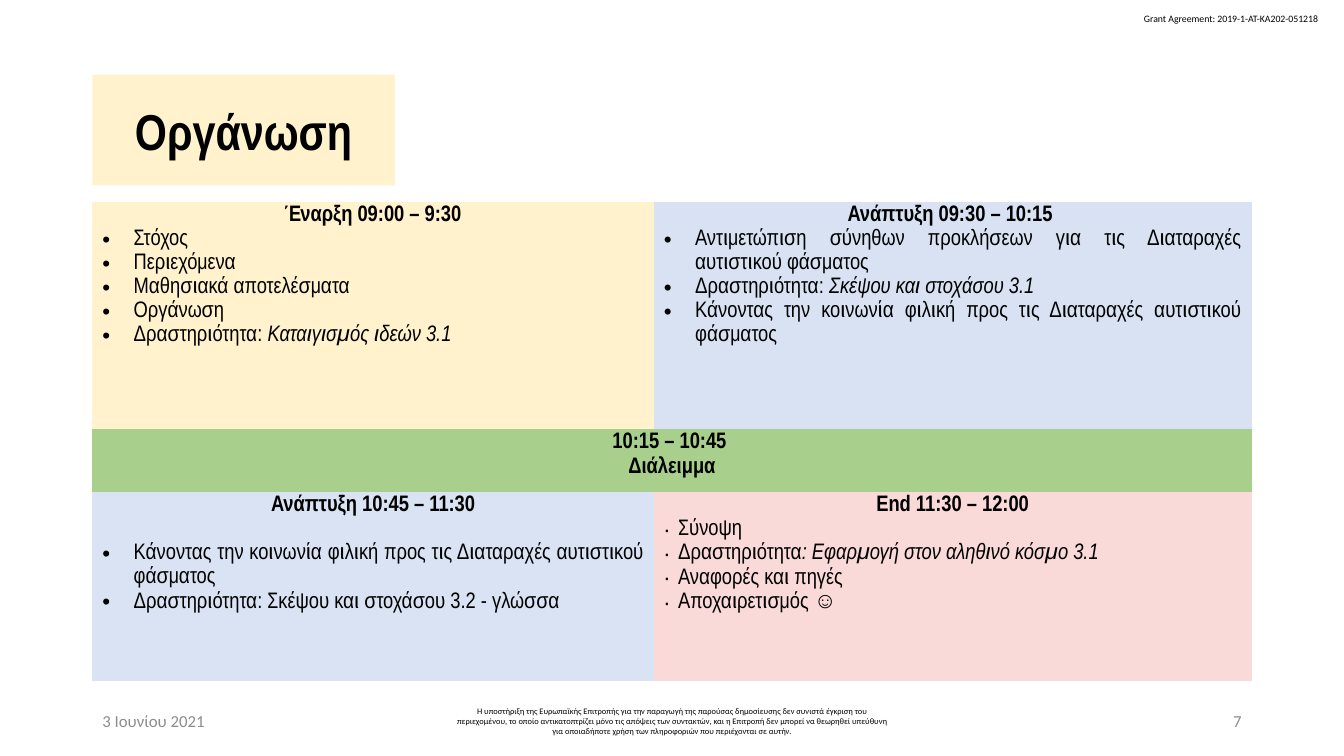
"""Build the workshop schedule slide with its title, agenda table and footer."""
from lxml import etree
from pptx import Presentation
from pptx.enum import text as t
from pptx.dml.color import RGBColor
from pptx.oxml import ns
from pptx.util import Cm, Pt

COLOURS = {
    "black": "000000", "grey": "8C8C8C", "cream": "FFF2CC", "blue": "D8E2F3",
    "pale blue": "DAE3F3", "green": "A8D08C", "pink": "F9DAD9",
}
LEFT, CENTER, RIGHT, JUSTIFY = (
    t.PP_ALIGN.LEFT, t.PP_ALIGN.CENTER, t.PP_ALIGN.RIGHT, t.PP_ALIGN.JUSTIFY)


def write(paragraph, content, size=16, font="Arial Narrow", colour="black",
          bold=False, italic=False, align=LEFT):
    """Add one formatted run to a paragraph."""
    paragraph.alignment = align
    run = paragraph.add_run()
    run.text = content
    run.font.size = Pt(size)
    run.font.name = font
    run.font.bold = bold
    run.font.italic = italic
    run.font.color.rgb = RGBColor.from_string(COLOURS[colour])


def add_bullet(paragraph, symbol, indent):
    """Give a paragraph a hanging bullet."""
    properties = paragraph._p.get_or_add_pPr()
    properties.set("marL", str(Cm(indent)))
    properties.set("indent", str(-Cm(indent)))
    colour = etree.SubElement(properties, ns.qn("a:buClr"))
    etree.SubElement(colour, ns.qn("a:srgbClr"), val=COLOURS["black"])
    etree.SubElement(properties, ns.qn("a:buFont"), typeface="Arial")
    etree.SubElement(properties, ns.qn("a:buChar"), char=symbol)


presentation = Presentation()
presentation.slide_width = Cm(33.87)
presentation.slide_height = Cm(19.05)
slide = presentation.slides.add_slide(presentation.slide_layouts[5])

title = slide.shapes.title
title.left, title.top, title.width, title.height = Cm(2.33), Cm(1.88), Cm(7.62), Cm(2.79)
title.fill.solid()
title.fill.fore_color.rgb = RGBColor.from_string(COLOURS["cream"])
title.text_frame.auto_size = t.MSO_AUTO_SIZE.NONE
title.text_frame.vertical_anchor = t.MSO_ANCHOR.MIDDLE
write(title.text_frame.paragraphs[0], "Οργάνωση", size=36, bold=True, align=CENTER)

small_texts = [
    ("Grant Agreement: 2019-1-AT-KA202-051218", 28.58, 0.2, 5, 0.56, 7, "black", LEFT, False),
    ("3 Ιουνίου 2021", 2.33, 17.66, 7.62, 1.01, 12, "grey", LEFT, True),
    ("Η υποστήριξη της Ευρωπαϊκής Επιτροπής για την παραγωγή της παρούσας δημοσίευσης "
     "δεν συνιστά έγκριση του περιεχομένου, το οποίο αντικατοπτρίζει μόνο τις απόψεις των "
     "συντακτών, και η Επιτροπή δεν μπορεί να θεωρηθεί υπεύθυνη για οποιαδήποτε χρήση των "
     "πληροφοριών που περιέχονται σε αυτήν.", 11.22, 17.66, 11.43, 1.01, 6, "black", CENTER, True),
    ("7", 23.92, 17.66, 7.62, 1.01, 12, "grey", RIGHT, True),
]
for content, left, top, width, height, size, colour, align, wrap in small_texts:
    frame = slide.shapes.add_textbox(Cm(left), Cm(top), Cm(width), Cm(height)).text_frame
    frame.word_wrap = wrap
    frame.vertical_anchor = t.MSO_ANCHOR.MIDDLE if wrap else t.MSO_ANCHOR.TOP
    write(frame.paragraphs[0], content, size=size, font="Calibri", colour=colour, align=align)

graphic_frame = slide.shapes.add_table(3, 2, Cm(2.33), Cm(5.08), Cm(29.21), Cm(12.07))
table = graphic_frame.table
table.first_row = table.horz_banding = False
style = graphic_frame._element.find(".//" + ns.qn("a:tableStyleId"))
style.text = "{2D5ABB26-0587-4C30-8999-92F81FD0307C}"
for column, width in zip(table.columns, (14.15, 15.06)):
    column.width = Cm(width)
for row, height in zip(table.rows, (5.74, 1.58, 4.75)):
    row.height = Cm(height)
table.cell(1, 0).merge(table.cell(1, 1))

friendly = ("Κάνοντας την κοινωνία φιλική προς τις Διαταραχές αυτιστικού φάσματος", "")
sessions = [
    (0, 0, "cream", ["Έναρξη 09:00 – 9:30"], "•", 0.79, LEFT, 0, [
        ("Στόχος", ""), ("Περιεχόμενα", ""), ("Μαθησιακά αποτελέσματα", ""),
        ("Οργάνωση", ""), ("Δραστηριότητα: ", "Καταιγισμός ιδεών 3.1")]),
    (0, 1, "blue", ["Ανάπτυξη 09:30 – 10:15 "], "•", 0.79, JUSTIFY, 0, [
        ("Αντιμετώπιση σύνηθων προκλήσεων για τις Διαταραχές αυτιστικού φάσματος", ""),
        ("Δραστηριότητα: ", "Σκέψου και στοχάσου 3.1"), friendly]),
    (1, 0, "green", ["10:15 – 10:45 ", "Διάλειμμα"], "", 0, CENTER, 0, []),
    (2, 0, "pale blue", ["Ανάπτυξη 10:45 – 11:30"], "•", 0.79, JUSTIFY, 17.2, [
        friendly, ("Δραστηριότητα: Σκέψου και στοχάσου 3.2 - γλώσσα", "")]),
    (2, 1, "pink", ["End 11:30 – 12:00"], "∙", 0.36, LEFT, 0, [
        ("Σύνοψη", ""), ("Δραστηριότητα", ": Εφαρμογή στον αληθινό κόσμο 3.1"),
        ("Αναφορές και πηγές", ""), ("Αποχαιρετισμός ☺", "")]),
]
for row, column, colour, headings, symbol, indent, align, gap, items in sessions:
    cell = table.cell(row, column)
    cell.fill.solid()
    cell.fill.fore_color.rgb = RGBColor.from_string(COLOURS[colour])
    cell.margin_left = cell.margin_right = Cm(0.25)
    cell.margin_top = cell.margin_bottom = 0
    frame = cell.text_frame
    for number, heading in enumerate(headings):
        paragraph = frame.add_paragraph() if number else frame.paragraphs[0]
        write(paragraph, heading, bold=True, align=CENTER)
    for number, (plain, slanted) in enumerate(items):
        paragraph = frame.add_paragraph()
        add_bullet(paragraph, symbol, indent)
        if gap and number == 0:
            paragraph.space_before = Pt(gap)
        write(paragraph, plain, align=align)
        if slanted:
            write(paragraph, slanted, italic=True, align=align)
    for paragraph in frame.paragraphs:
        paragraph.line_spacing = 1.15

presentation.save("out.pptx")
